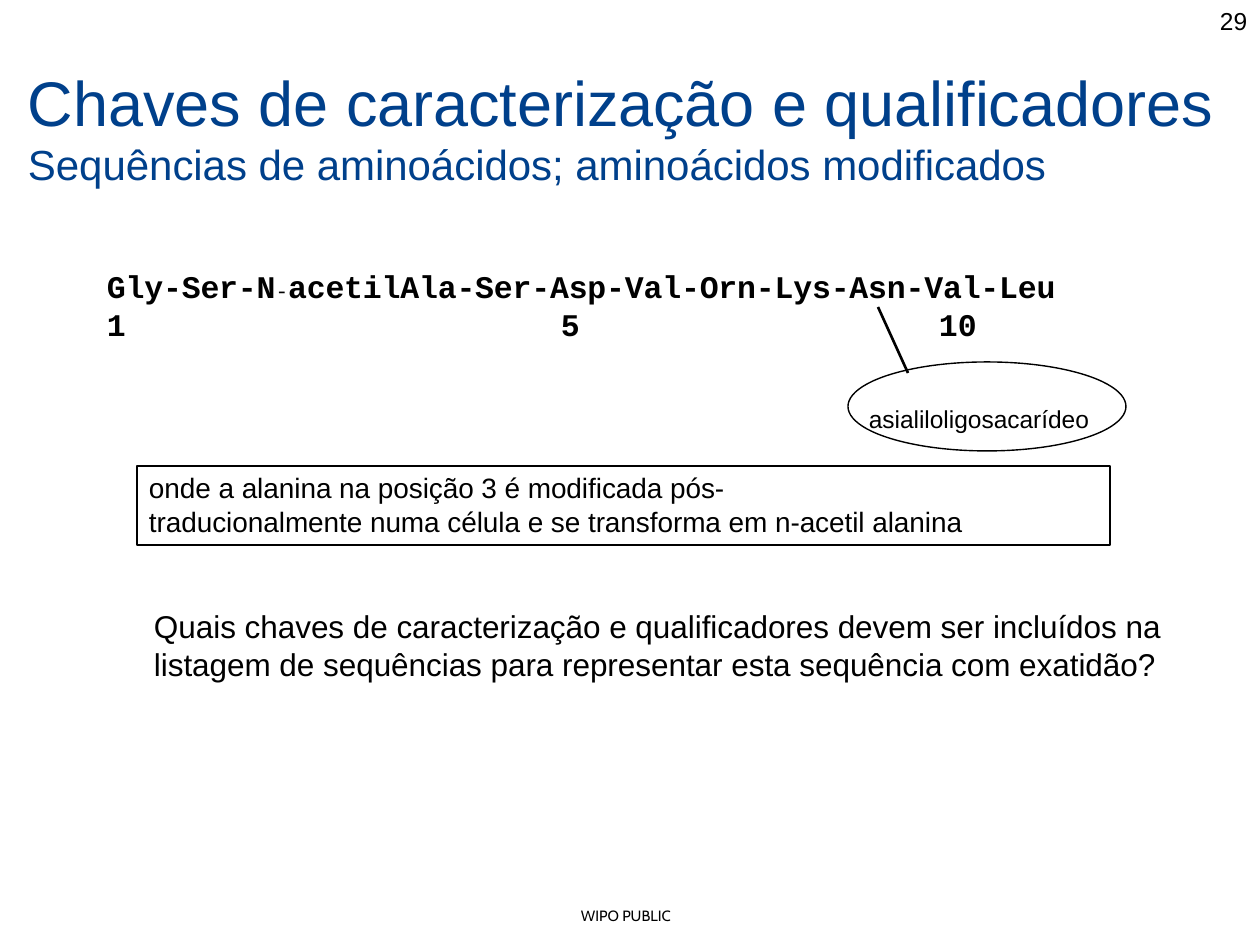
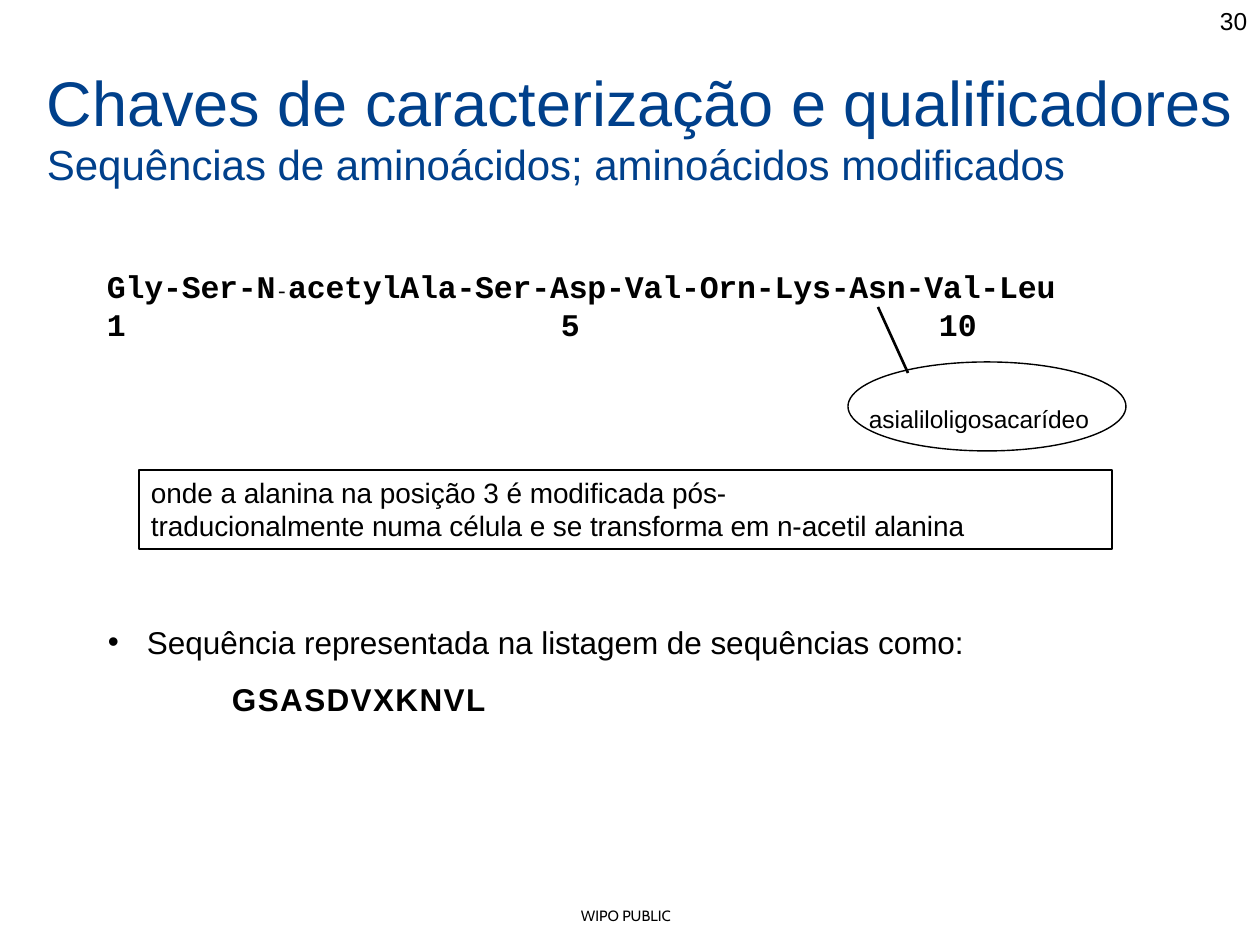
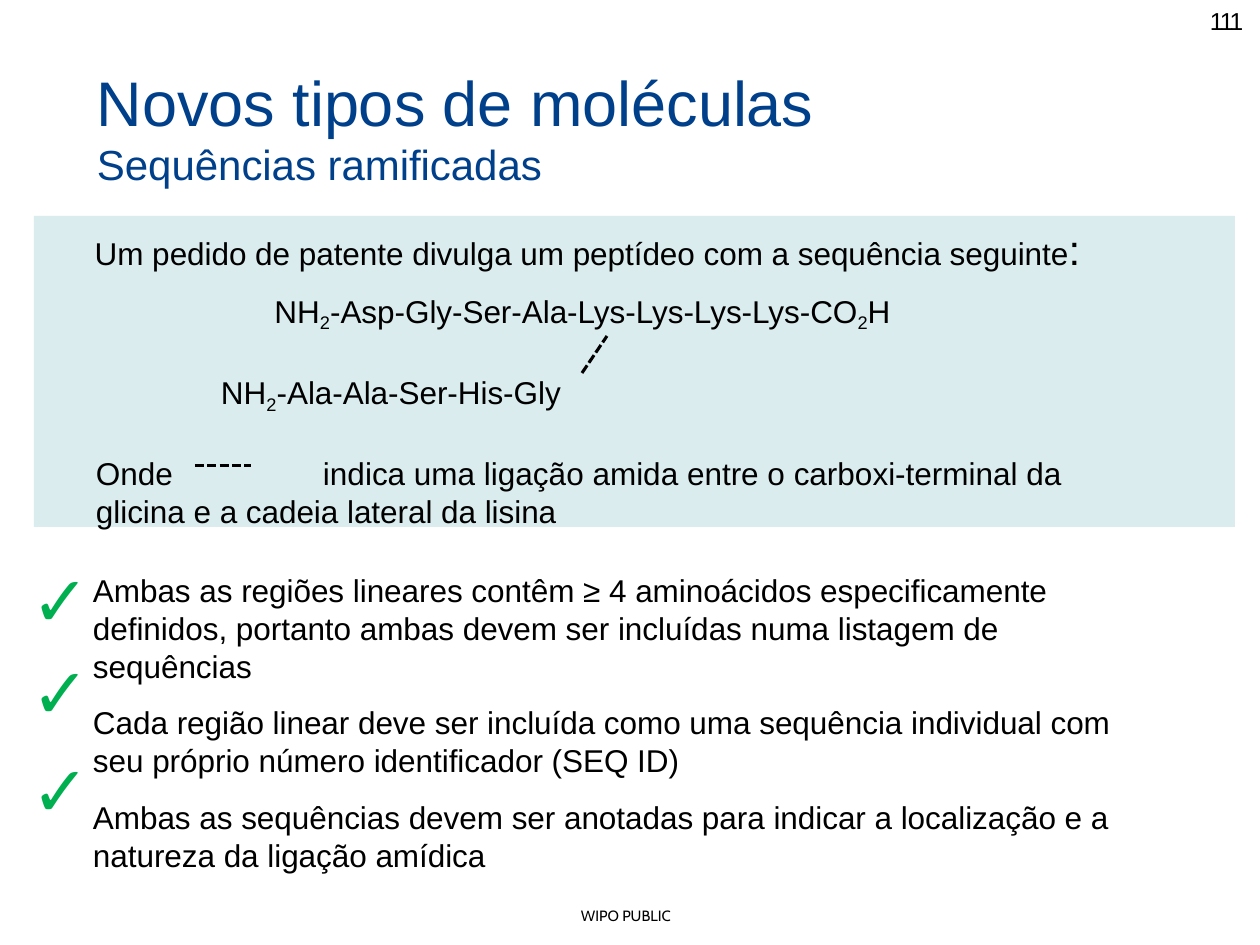
from lxml import etree
from pptx import Presentation
from pptx.dml.color import RGBColor
from pptx.enum.dml import MSO_LINE
from pptx.enum.shapes import MSO_CONNECTOR, MSO_SHAPE
from pptx.enum.text import MSO_ANCHOR, PP_ALIGN
from pptx.oxml.ns import qn
from pptx.util import Emu, Pt

EMU_PER_PX = 914400 / 126
COLORS = {"text": "000000", "title": "00408B", "panel": "DAECEE", "check": "00AF50"}
LEFT, CENTER, RIGHT = PP_ALIGN.LEFT, PP_ALIGN.CENTER, PP_ALIGN.RIGHT
TOP = MSO_ANCHOR.TOP
DASH = MSO_LINE.SQUARE_DOT
STRAIGHT = MSO_CONNECTOR.STRAIGHT
RECTANGLE, OVAL = MSO_SHAPE.RECTANGLE, MSO_SHAPE.OVAL
SUBSCRIPT_TWO = ("2", {"baseline": -21})


def px(value):
    return Emu(round(value * EMU_PER_PX))


def color(name):
    return RGBColor.from_string(COLORS[name])


class Deck:
    """Holds the shared style and the slide being built."""

    def __init__(self):
        self.presentation = Presentation()
        self.presentation.slide_width = px(1260)
        self.presentation.slide_height = px(945)
        self.slide = None

    def new_slide(self, number, title, subtitle, title_left, number_left=1220, number_spacing=-0.03):
        self.slide = self.presentation.slides.add_slide(self.presentation.slide_layouts[6])
        self.text(number_left, 5, 40, 33, [dict(runs=[number], size=14, spacing=number_spacing)], wrap=False)
        self.text(title_left, 62, 1190, 130, [
            dict(runs=[title], size=36, color_name="title"),
            dict(runs=[subtitle], size=24, color_name="title"),
        ], wrap=False)
        self.text(581, 906, 100, 20, [dict(runs=["WIPO PUBLIC"], size=8.5, font="Cabin")], wrap=False)

    def text(self, left, top, width, height, paragraphs, inset=1, wrap=True):
        box = self.slide.shapes.add_textbox(px(left), px(top), px(width), px(height))
        self.fill_frame(box.text_frame, paragraphs, (0, inset), wrap)

    def shape(self, kind, left, top, width, height, fill=None, line=None, paragraphs=(), insets=(0, 0)):
        shape = self.slide.shapes.add_shape(kind, px(left), px(top), px(width), px(height))
        shape.shadow.inherit = False
        if fill:
            shape.fill.solid()
            shape.fill.fore_color.rgb = color(fill)
        else:
            shape.fill.background()
        if line:
            shape.line.color.rgb = color("text")
            shape.line.width = Pt(line)
        else:
            shape.line.fill.background()
        if paragraphs:
            self.fill_frame(shape.text_frame, paragraphs, insets)

    def line(self, start, end, width, dash=None):
        connector = self.slide.shapes.add_connector(STRAIGHT, *map(px, start + end))
        connector.line.color.rgb = color("text")
        connector.line.width = Pt(width)
        if dash:
            connector.line.dash_style = dash
        etree.SubElement(connector._element.spPr, qn("a:effectLst"))

    def fill_frame(self, frame, paragraphs, insets, wrap=True):
        frame.word_wrap = wrap
        frame.vertical_anchor = TOP
        frame.margin_left, frame.margin_top = map(px, insets)
        frame.margin_right = frame.margin_bottom = 0
        for index, content in enumerate(paragraphs):
            paragraph = frame.add_paragraph() if index else frame.paragraphs[0]
            self.fill_paragraph(paragraph, **content)

    def fill_paragraph(self, paragraph, runs, size=18, font="Arial", color_name="text", bold=False,
                       spacing=-0.03, align=LEFT, before=0, indent=0, hanging=0,
                       right_indent=0, bullet=None, tabs=()):
        paragraph.alignment = align
        if before:
            paragraph.space_before = Pt(before)
        properties = paragraph._p.get_or_add_pPr()
        for name, distance in (("marL", indent), ("marR", right_indent), ("indent", -hanging)):
            if distance:
                properties.set(name, str(px(distance)))
        if bullet:
            etree.SubElement(properties, qn("a:buFont"), typeface=font)
            etree.SubElement(properties, qn("a:buChar"), char=bullet)
        if tabs:
            tab_list = etree.SubElement(properties, qn("a:tabLst"))
            for position in tabs:
                etree.SubElement(tab_list, qn("a:tab"), pos=str(px(position)), algn="l")
        paragraph.font.size = Pt(size)
        paragraph.font.name = font
        paragraph.font.bold = bold
        paragraph.font.color.rgb = color(color_name)
        paragraph.font._rPr.set("spc", str(round(spacing * 100)))
        for item in runs:
            words, changes = (item, {}) if isinstance(item, str) else item
            run = paragraph.add_run()
            run.text = words
            if "size" in changes:
                run.font.size = Pt(changes["size"])
            if "bold" in changes:
                run.font.bold = changes["bold"]
            if "baseline" in changes:
                run._r.get_or_add_rPr().set("baseline", str(changes["baseline"] * 1000))

    def modified_peptide(self, residue, note_left, note_top):
        code = dict(font="Courier New", bold=True)
        self.text(107, 266, 982, 170, [
            dict(runs=["Gly-Ser-N", ("-", {"size": 12, "bold": False}),
                       f"{residue}-Ser-Asp-Val-Orn-Lys-Asn-Val-Leu"], spacing=-0.1, **code),
            dict(runs=["1\t5\t10"], tabs=(454, 832), spacing=0, **code),
            dict(runs=["asialiloligosacarídeo"], size=14, align=RIGHT, before=35),
        ])
        self.shape(OVAL, 848, 362, 278, 89, line=0.78)
        self.line((878, 307), (908, 373), 1.5)
        self.shape(RECTANGLE, note_left, note_top, 973, 79, line=0.78, insets=(12, 5), paragraphs=[
            dict(runs=["onde a alanina na posição 3 é modificada pós-"], size=16),
            dict(runs=["traducionalmente numa célula e se transforma em n-acetil alanina"], size=16),
        ])


def main():
    deck = Deck()
    keys_title = ("Chaves de caracterização e qualificadores",
                  "Sequências de aminoácidos; aminoácidos modificados")

    deck.new_slide("29", *keys_title, title_left=28)
    deck.modified_peptide("acetilAla", 137, 466)
    deck.text(154, 606, 1025, 80, [
        dict(runs=["Quais chaves de caracterização e qualificadores devem ser incluídos na "
                   "listagem de sequências para representar esta sequência com exatidão?"]),
    ])

    deck.new_slide("30", *keys_title, title_left=47)
    deck.modified_peptide("acetylAla", 139, 470)
    deck.text(105, 603, 870, 117, [
        dict(runs=["Sequência representada na listagem de sequências como:"],
             indent=42, hanging=39, bullet="•"),
        dict(runs=["GSASDVXKNVL"], bold=True, spacing=0.8, before=10.8, indent=127),
    ], inset=20)

    deck.new_slide("111", "Novos tipos de moléculas", "Sequências ramificadas",
                   title_left=97, number_left=1210, number_spacing=-1.1)
    deck.shape(RECTANGLE, 34, 216, 1201, 311, fill="panel", insets=(0, 8), paragraphs=[
        dict(runs=["Um pedido de patente divulga um peptídeo com a sequência seguinte",
                   (":", {"size": 24})], align=CENTER, right_indent=94),
        dict(runs=["NH", SUBSCRIPT_TWO, "-Asp-Gly-Ser-Ala-Lys-Lys-Lys-Lys-CO", SUBSCRIPT_TWO, "H"],
             align=CENTER, right_indent=104, before=10),
        dict(runs=["NH", SUBSCRIPT_TWO, "-Ala-Ala-Ser-His-Gly"], indent=187, before=22.5),
        dict(runs=["Onde\tindica uma ligação amida entre o carboxi-terminal da"],
             indent=62, tabs=(227,), before=22.5, spacing=0),
        dict(runs=["glicina e a cadeia lateral da lisina"], indent=62),
    ])
    deck.line((582, 373), (607, 336), 1.75, DASH)
    deck.line((195, 466), (251, 466), 1.75, DASH)
    conclusions = (
        "Ambas as regiões lineares contêm ≥ 4 aminoácidos especificamente definidos, "
        "portanto ambas devem ser incluídas numa listagem de sequências",
        "Cada região linear deve ser incluída como uma sequência individual com "
        "seu próprio número identificador (SEQ ID)",
        "Ambas as sequências devem ser anotadas para indicar a localização e a "
        "natureza da ligação amídica",
    )
    deck.text(93, 570, 1035, 306, [
        dict(runs=[conclusion], before=10.8 if index else 0)
        for index, conclusion in enumerate(conclusions)
    ])
    deck.text(32, 548, 58, 285, [
        dict(runs=["✓"], size=40, color_name="check", before=before) for before in (0, 4.4, 7.8)
    ], inset=9)

    deck.presentation.save("out.pptx")


if __name__ == "__main__":
    main()
